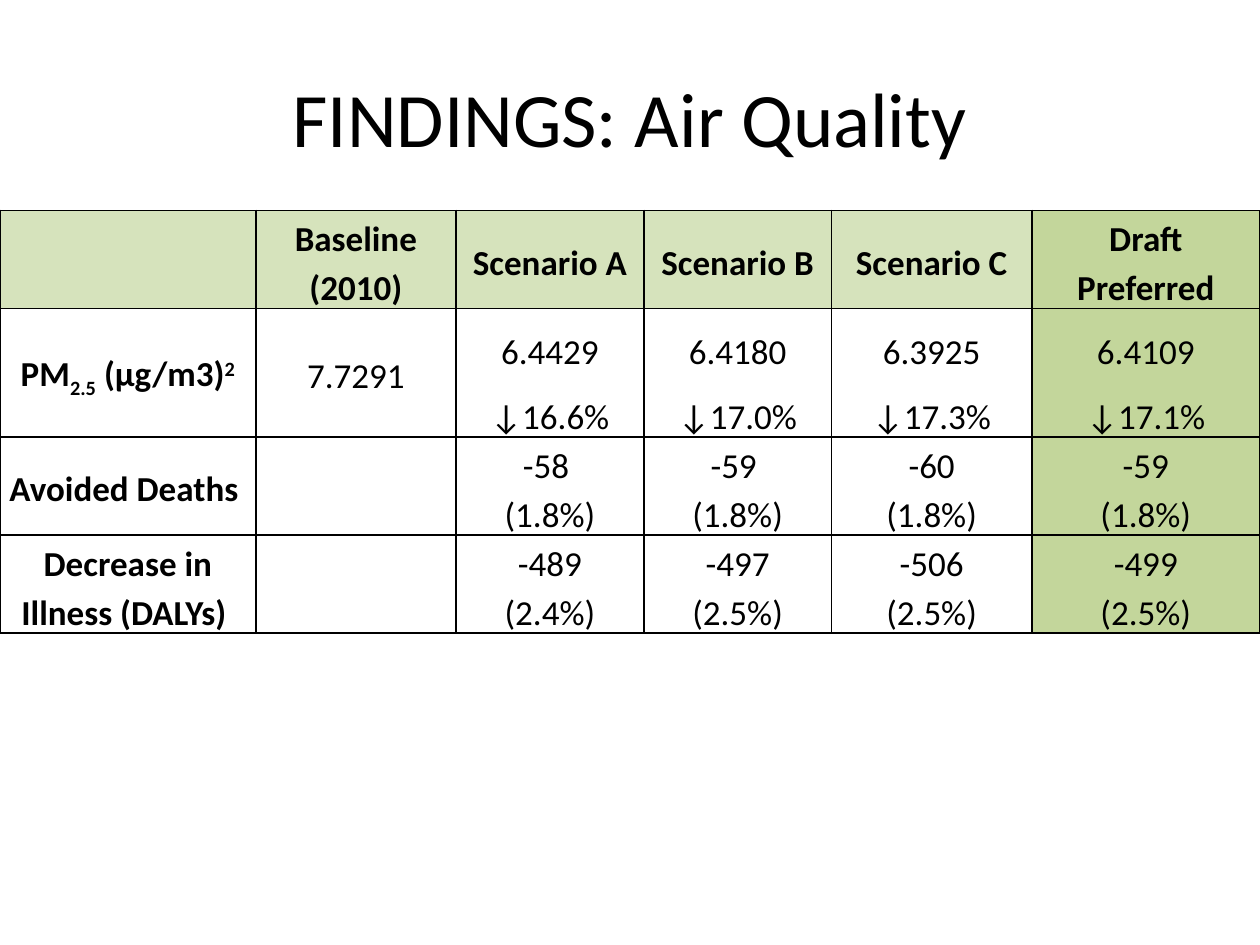
from lxml.etree import SubElement
from pptx import Presentation
from pptx.dml.color import RGBColor
from pptx.enum.text import MSO_ANCHOR, PP_ALIGN
from pptx.oxml.ns import qn
from pptx.util import Inches, Pt

COLORS = {"text": "000000", "line": "000000", "head": "D6E3BC", "pick": "C3D69B"}
FONT = "Calibri"
COLS = [2.03, 1.59, 1.49, 1.49, 1.59, 1.81]
ROWS = [0.78, 1.02, 0.77, 0.77]

# Each line break starts a new paragraph; a tuple is (text, baseline shift).
PM = [("PM", 0), ("2.5", -25000), (" (µg/m3)", 0), ("2", 30000)]
CELLS = [
    ["", "Baseline\n(2010)", "Scenario A", "Scenario B", "Scenario C", "Draft Preferred"],
    [PM, "7.7291", "6.4429\n↓16.6%", "6.4180\n↓17.0%", "6.3925\n↓17.3%", "6.4109\n↓17.1%"],
    ["Avoided Deaths ", "", "-58 \n(1.8%)", "-59 \n(1.8%)", "-60\n(1.8%)", "-59\n(1.8%)"],
    ["Decrease in Illness (DALYs) ", "", "-489\n(2.4%)", "-497\n(2.5%)", "-506\n(2.5%)",
     "-499\n(2.5%)"],
]


def color(name):
    return RGBColor.from_string(COLORS[name])


def style(para, size, bold=False, space=1.0):
    para.alignment = PP_ALIGN.CENTER
    para.line_spacing = space
    font = para.font
    font.name, font.size, font.bold = FONT, Pt(size), bold
    font.color.rgb = color("text")


def add_title(slide, box, text):
    frame = slide.shapes.add_textbox(*map(Inches, box)).text_frame
    frame.word_wrap = True
    frame.vertical_anchor = MSO_ANCHOR.MIDDLE
    frame.text = text
    style(frame.paragraphs[0], 44)


def add_edges(cell):
    props = cell._tc.get_or_add_tcPr()
    for side in ("lnL", "lnR", "lnT", "lnB"):
        line = SubElement(props, qn(f"a:{side}"), w=str(Pt(1)))
        fill = SubElement(line, qn("a:solidFill"))
        SubElement(fill, qn("a:srgbClr"), val=COLORS["line"])


def fill_cell(cell, text, bold, space, shade):
    cell.margin_left = cell.margin_right = Inches(0.07)
    cell.margin_top, cell.margin_bottom = Inches(0.01), 0
    cell.vertical_anchor = MSO_ANCHOR.MIDDLE
    add_edges(cell)
    if shade:
        cell.fill.solid()
        cell.fill.fore_color.rgb = color(shade)
    else:
        cell.fill.background()
    frame = cell.text_frame
    if isinstance(text, str):
        frame.text = text
    else:
        for part, shift in text:
            run = frame.paragraphs[0].add_run()
            run.text = part
            if shift:
                run._r.get_or_add_rPr().set("baseline", str(shift))
    for para in frame.paragraphs:
        style(para, 20, bold, space)


def add_grid(slide, box):
    table = slide.shapes.add_table(len(ROWS), len(COLS), *map(Inches, box)).table
    table.first_row = table.horz_banding = False
    for col, width in zip(table.columns, COLS):
        col.width = Inches(width)
    for row, height in zip(table.rows, ROWS):
        row.height = Inches(height)
    for r, line in enumerate(CELLS):
        for c, text in enumerate(line):
            bold = r == 0 or c == 0
            space = 1.5 if r == 1 and c > 1 else 1.15
            shade = "pick" if c == len(COLS) - 1 else "head" if r == 0 else None
            fill_cell(table.cell(r, c), text, bold, space, shade)


def main():
    deck = Presentation()
    deck.slide_width, deck.slide_height = Inches(10), Inches(7.5)
    slide = deck.slides.add_slide(deck.slide_layouts[6])
    add_title(slide, (0.5, 0.3, 9, 1.25), "FINDINGS: Air Quality")
    add_grid(slide, (0, 1.67, sum(COLS), sum(ROWS)))
    deck.save("out.pptx")


if __name__ == "__main__":
    main()
